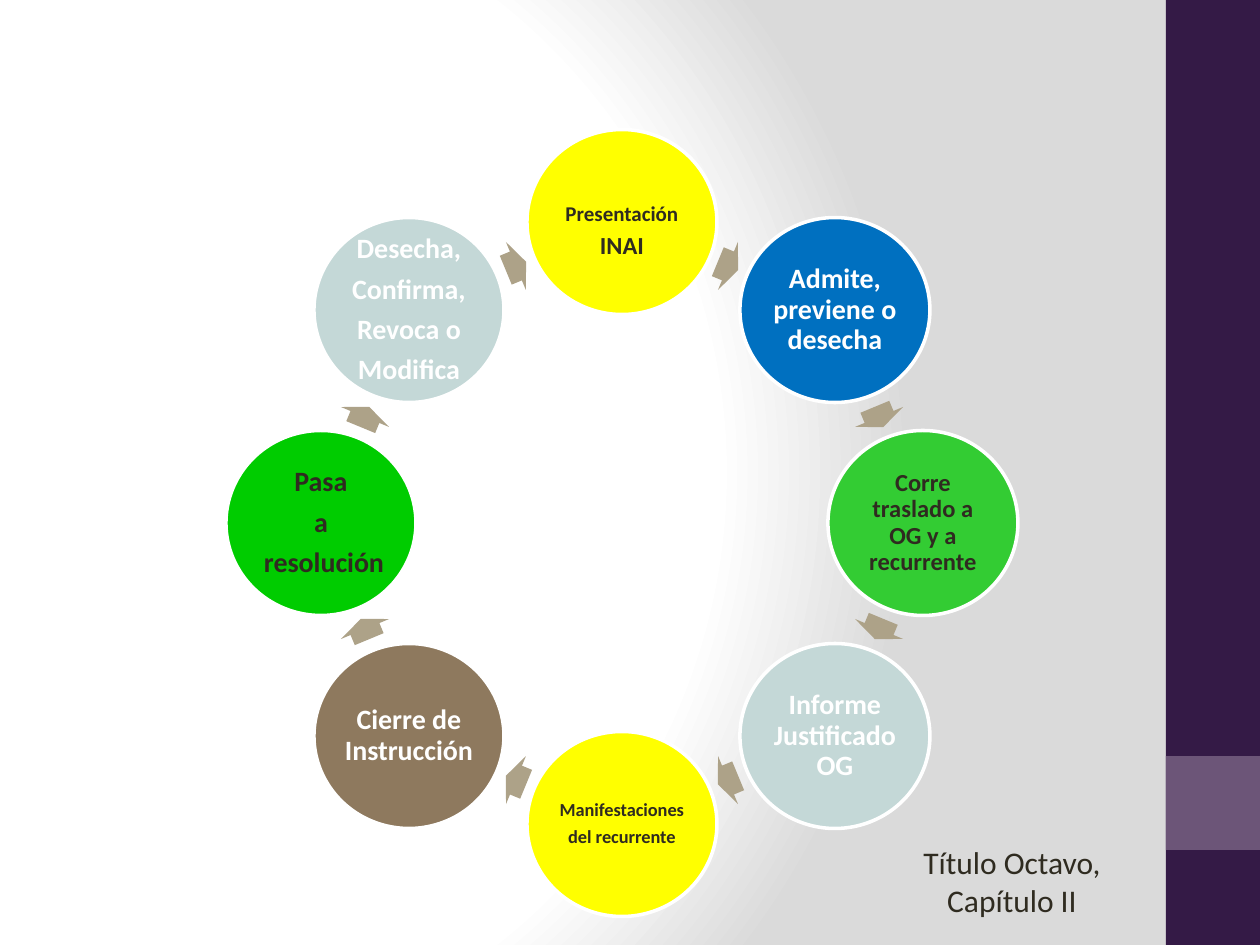
from math import cos, radians, sin

from pptx import Presentation
from pptx.dml.color import RGBColor
from pptx.enum.shapes import MSO_SHAPE
from pptx.enum.text import MSO_ANCHOR, PP_ALIGN
from pptx.oxml import parse_xml
from pptx.oxml.ns import nsdecls, qn
from pptx.util import Emu, Pt

COLORS = {
    "white": "FFFFFF", "gray": "DADADA", "dark": "341A46", "plum": "6C5578",
    "ink": "2F2B20", "yellow": "FFFF00", "blue": "0070C0", "lime": "33CC33",
    "mist": "C4D8D7", "brown": "8E795E", "green": "00CC00", "sand": "ADA288",
}
# Centre of the cycle, and the ring radii of steps and arrows
MID_X, MID_Y = 622, 523
STEP_R, ARROW_R = 301, 278

# Fill, text colour, lines as (text, size), inset above the text
STEPS = [
    ("yellow", "ink", [("Presentación", 12), ("INAI", 14)], 21),
    ("blue", "white", [("Admite, previene o desecha", 16)], 2),
    ("lime", "ink", [("Corre traslado a OG y a recurrente", 14)], 2),
    ("mist", "white", [("Informe Justificado OG", 16)], 2),
    ("yellow", "ink", [("Manifestaciones", 10.5), ("del recurrente", 10.5)], 2),
    ("brown", "white", [("Cierre de Instrucción", 16)], 2),
    ("green", "ink", [("Pasa", 16), ("a", 16), (" resolución", 16)], 2),
    ("mist", "white", [("Desecha,", 16), ("Confirma,", 16),
                       ("Revoca o", 16), ("Modifica", 16)], 2),
]
TURN = 360 / len(STEPS)


def px(num):
    return Emu(round(num * 914400 / 126))


def rgb(name):
    return RGBColor.from_string(COLORS[name])


def on_ring(angle, radius):
    """Point on the ring, clockwise from the top."""
    turn = radians(angle)
    return round(MID_X + radius * sin(turn)), round(MID_Y - radius * cos(turn))


def add_text(shape, lines, color, bold=False, space=None, gap=0.0,
             insets=None, anchor=MSO_ANCHOR.TOP):
    frame = shape.text_frame
    frame.word_wrap = True
    frame.vertical_anchor = anchor
    if insets:
        (frame.margin_left, frame.margin_top,
         frame.margin_right, frame.margin_bottom) = map(px, insets)
    for i, (text, size) in enumerate(lines):
        para = frame.add_paragraph() if i else frame.paragraphs[0]
        para.alignment = PP_ALIGN.CENTER
        para.line_spacing = space
        para.space_after = Pt(round(gap * size, 1))
        run = para.add_run()
        run.text = text
        font = run.font
        font.name, font.size, font.bold = "Calibri", Pt(size), bold
        font.color.rgb = rgb(color)


def add_shape(slide, kind, box, fill, line=None):
    shape = slide.shapes.add_shape(kind, *map(px, box))
    shape.shadow.inherit = False
    shape.fill.solid()
    shape.fill.fore_color.rgb = rgb(fill)
    if line:
        shape.line.color.rgb = rgb(line)
        shape.line.width = Pt(2)
    else:
        shape.line.fill.background()
    return shape


def add_step(slide, angle, fill, color, lines, top):
    x, y = on_ring(angle, STEP_R)
    wide, high = 190, 185
    shape = add_shape(slide, MSO_SHAPE.OVAL,
                      (x - wide / 2, y - high / 2, wide, high), fill, "white")
    add_text(shape, lines, color, bold=True, space=0.9, gap=0.35,
             insets=(2, top, 2, 2), anchor=MSO_ANCHOR.MIDDLE)


def add_arrow(slide, angle):
    x, y = on_ring(angle, ARROW_R)
    wide, high = 22, 52
    shape = add_shape(slide, MSO_SHAPE.RIGHT_ARROW,
                      (x - wide / 2, y - high / 2, wide, high), "sand")
    shape.adjustments[0] = 0.6
    shape.adjustments[1] = 0.5
    shape.rotation = angle


def set_back(slide):
    """Circular gradient, white in the middle and gray at the right."""
    slide.background.fill.gradient()
    old = slide.element.find(".//" + qn("a:gradFill"))
    stops = "".join(
        f'<a:gs pos="{pos * 1000}"><a:srgbClr val="{COLORS[name]}"/></a:gs>'
        for pos, name in ((0, "white"), (75, "white"), (100, "gray")))
    new = parse_xml(
        f'<a:gradFill {nsdecls("a")} rotWithShape="1"><a:gsLst>{stops}</a:gsLst>'
        '<a:path path="circle"><a:fillToRect l="20000" t="50000" r="100000"'
        ' b="50000"/></a:path></a:gradFill>')
    old.getparent().replace(old, new)


def main():
    deck = Presentation()
    deck.slide_width, deck.slide_height = px(1260), px(945)
    slide = deck.slides.add_slide(deck.slide_layouts[6])
    set_back(slide)

    # Side band
    add_shape(slide, MSO_SHAPE.RECTANGLE, (1166, 0, 94, 945), "dark")
    add_shape(slide, MSO_SHAPE.RECTANGLE, (1166, 756, 94, 94), "plum")

    # Chapter label
    label = slide.shapes.add_textbox(*map(px, (874, 837, 276, 89)))
    add_text(label, [("Título Octavo, Capítulo II", 18)], "ink")

    # Cycle of steps, each followed by an arrow
    for i, step in enumerate(STEPS):
        add_step(slide, i * TURN, *step)
        add_arrow(slide, (i + 0.5) * TURN)

    deck.save("out.pptx")


if __name__ == "__main__":
    main()
